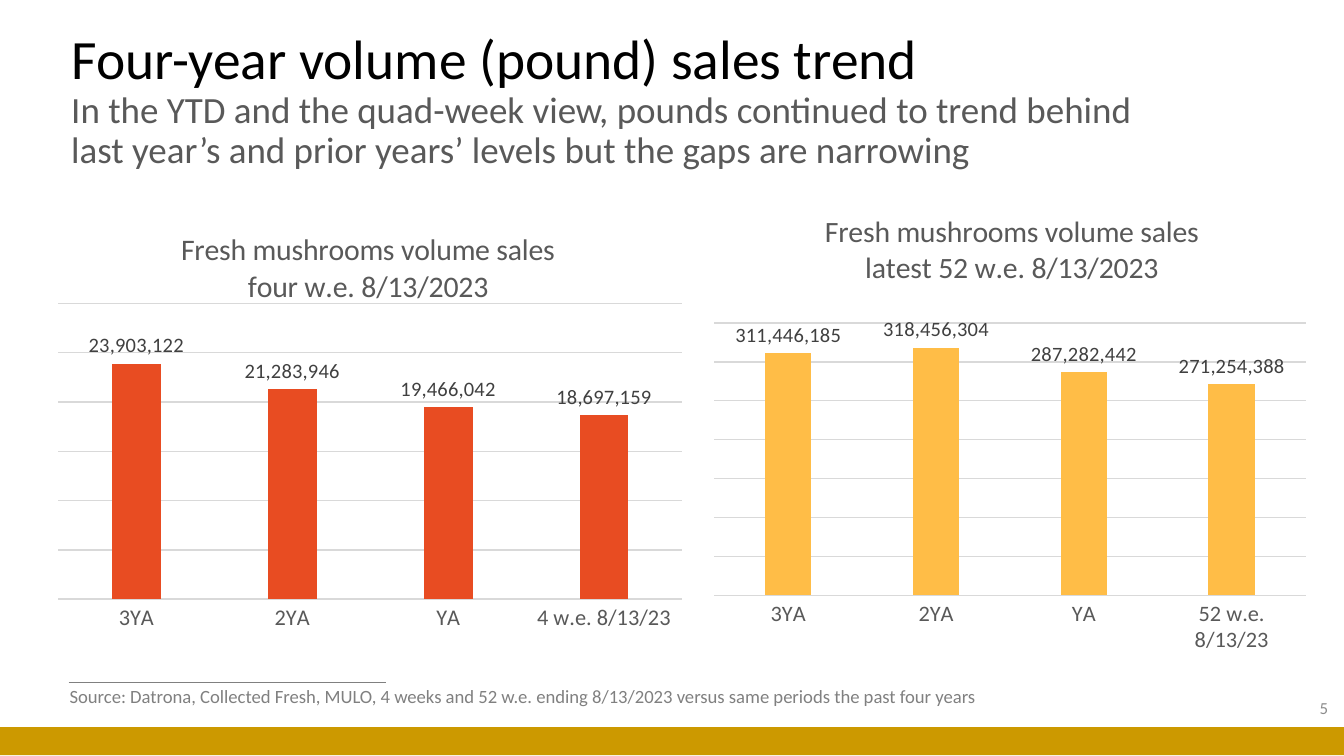
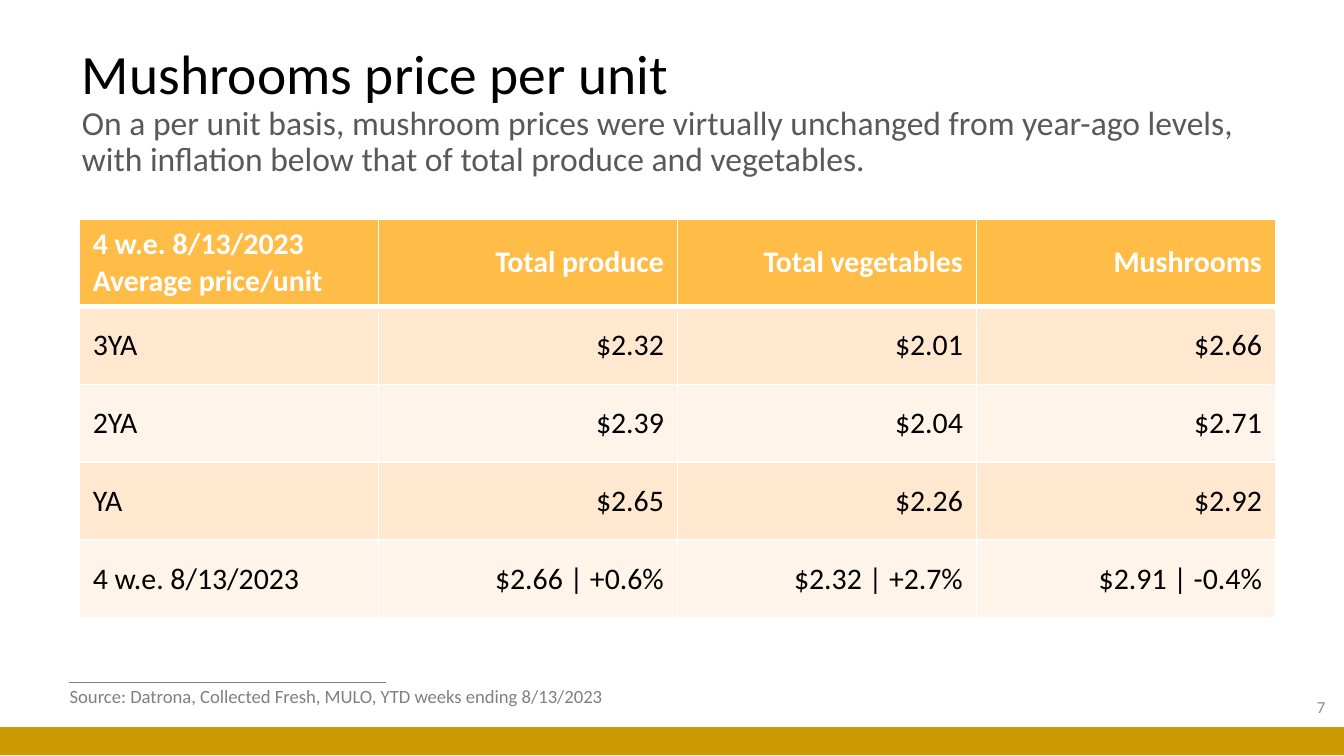
from lxml import etree
from pptx import Presentation
from pptx.chart.data import CategoryChartData
from pptx.dml.color import RGBColor
from pptx.enum.chart import XL_CHART_TYPE as ChartType
from pptx.enum.chart import XL_LABEL_POSITION as LabelPosition
from pptx.enum.chart import XL_TICK_MARK as TickMark
from pptx.enum.shapes import MSO_CONNECTOR as Connector
from pptx.enum.shapes import MSO_SHAPE as Shape
from pptx.enum.text import MSO_ANCHOR as Anchor
from pptx.enum.text import MSO_AUTO_SIZE as AutoSize
from pptx.enum.text import PP_ALIGN as Align
from pptx.oxml.ns import qn
from pptx.util import Inches, Pt

FONT = "Calibri"
COLORS = {
    "black": "000000",
    "white": "FFFFFF",
    "band": "CC9900",
    "source": "808080",
    "number": "8C8C8C",
    "subtitle": "595959",
    "label": "404040",
    "grid": "D9D9D9",
    "red": "E84C22",
    "amber": "FFBD47",
    "row_dark": "FFE8CF",
    "row_light": "FFF4E9",
}


def rgb(name):
    return RGBColor.from_string(COLORS[name])


def style(font, size, color, bold=None):
    font.name = FONT
    font.size = Pt(size)
    font.color.rgb = rgb(color)
    font.bold = bold


def box(left, top, width, height):
    return Inches(left), Inches(top), Inches(width), Inches(height)


def add_frame(slide):
    """Draw the bottom band and the short rule above the source."""
    rule = slide.shapes.add_connector(
        Connector.STRAIGHT, Inches(0.51), Inches(5.08), Inches(2.87), Inches(5.08))
    rule.line.color.rgb = rgb("source")
    rule.line.width = Pt(0.5)
    etree.SubElement(rule._element.spPr, qn("a:effectLst"))
    band = slide.shapes.add_shape(Shape.RECTANGLE, *box(0, 5.41, 10, 0.21))
    band.shadow.inherit = False
    band.fill.solid()
    band.fill.fore_color.rgb = rgb("band")
    band.line.fill.background()


def set_title(slide, heading, message, place, message_size):
    title = slide.shapes.title
    title.left, title.top, title.width, title.height = box(*place)
    frame = title.text_frame
    frame.text = f"{heading}\v{message}"
    frame.word_wrap = True
    frame.auto_size = AutoSize.NONE
    frame.vertical_anchor = Anchor.MIDDLE
    paragraph = frame.paragraphs[0]
    paragraph.alignment = Align.LEFT
    paragraph.line_spacing = 0.9
    heading_run, message_run = paragraph.runs
    style(heading_run.font, 29.7, "black")
    style(message_run.font, message_size, "subtitle")


def add_source(slide, text, width):
    frame = slide.shapes.add_textbox(*box(0.42, 5.05, width, 0.27)).text_frame
    frame.text = text
    frame.word_wrap = False
    frame.auto_size = AutoSize.SHAPE_TO_FIT_TEXT
    style(frame.paragraphs[0].runs[0].font, 10, "source")


def add_number(slide, number, left, top):
    frame = slide.shapes.add_textbox(*box(left, top, 2.25, 0.3)).text_frame
    frame.text = str(number)
    frame.word_wrap = True
    frame.vertical_anchor = Anchor.MIDDLE
    frame.paragraphs[0].alignment = Align.RIGHT
    style(frame.paragraphs[0].runs[0].font, 9, "number")


def set_layout(parent, index, **settings):
    """Give a chart part a manual layout, as child number index."""
    for previous in parent.findall(qn("c:layout")):
        parent.remove(previous)
    layout = etree.Element(qn("c:layout"))
    manual = etree.SubElement(layout, qn("c:manualLayout"))
    for tag, value in settings.items():
        etree.SubElement(manual, qn(f"c:{tag}")).set("val", str(value))
    parent.insert(index, layout)


def add_sales_chart(slide, place, title, title_place, sales, color,
                    axis_max, axis_step, plot_top, plot_height):
    data = CategoryChartData(number_format="#,##0")
    data.categories = list(sales)
    data.add_series("Series 1", list(sales.values()))
    chart = slide.shapes.add_chart(
        ChartType.COLUMN_CLUSTERED, *box(*place), data).chart
    style(chart.font, 10, "black")
    chart.has_legend = False

    chart.has_title = True
    title_frame = chart.chart_title.text_frame
    title_frame.text = title
    for paragraph in title_frame.paragraphs:
        style(paragraph.runs[0].font, 16, "subtitle", False)
    title_x, title_y = title_place
    set_layout(chart.chart_title._element, 1,
               xMode="edge", yMode="edge", x=title_x, y=title_y)

    plot_area = chart._chartSpace.find(qn("c:chart")).find(qn("c:plotArea"))
    set_layout(plot_area, 0, layoutTarget="inner", xMode="edge", yMode="edge",
               x=0, y=plot_top, w=1, h=plot_height)

    periods = chart.category_axis
    periods.major_tick_mark = periods.minor_tick_mark = TickMark.NONE
    periods.format.line.color.rgb = rgb("grid")
    periods.format.line.width = Pt(0.75)
    style(periods.tick_labels.font, 12, "subtitle")

    pounds = chart.value_axis
    pounds.visible = False
    pounds.minimum_scale = 0
    pounds.maximum_scale = axis_max
    pounds.major_unit = axis_step
    pounds.has_major_gridlines = True
    pounds.major_gridlines.format.line.color.rgb = rgb("grid")
    pounds.major_gridlines.format.line.width = Pt(0.75)
    pounds.tick_labels.number_format = "#,##0"
    pounds.tick_labels.number_format_is_linked = False

    plot = chart.plots[0]
    plot.gap_width = 219
    plot.overlap = -27
    plot.vary_by_categories = False
    bars = plot.series[0]
    bars.format.fill.solid()
    bars.format.fill.fore_color.rgb = rgb(color)
    labels = bars.data_labels
    labels.show_value = True
    labels.position = LabelPosition.OUTSIDE_END
    labels.number_format = "#,##0"
    labels.number_format_is_linked = False
    style(labels.font, 11, "label")


def set_borders(cell, bottom_width):
    widths = {"lnL": 1, "lnR": 1, "lnT": 1, "lnB": bottom_width}
    properties = cell._tc.get_or_add_tcPr()
    for index, (side, width) in enumerate(widths.items()):
        line = etree.Element(qn(f"a:{side}"), w=str(Pt(width)))
        fill = etree.SubElement(line, qn("a:solidFill"))
        etree.SubElement(fill, qn("a:srgbClr"), val=COLORS["white"])
        properties.insert(index, line)


def add_price_table(slide, rows):
    table = slide.shapes.add_table(
        len(rows), len(rows[0]), *box(0.59, 1.63, 8.9, 2.96)).table
    for column in table.columns:
        column.width = Inches(8.9 / len(rows[0]))
    for row_index, prices in enumerate(rows):
        header = row_index == 0
        table.rows[row_index].height = Inches(0.65 if header else 0.58)
        fill = "amber" if header else "row_dark" if row_index % 2 else "row_light"
        for column_index, text in enumerate(prices):
            cell = table.cell(row_index, column_index)
            cell.text_frame.text = text
            cell.vertical_anchor = Anchor.MIDDLE
            cell.fill.solid()
            cell.fill.fore_color.rgb = rgb(fill)
            set_borders(cell, 3 if header else 1)
            for paragraph in cell.text_frame.paragraphs:
                paragraph.alignment = Align.RIGHT if column_index else Align.LEFT
                style(paragraph.runs[0].font, 16,
                      "white" if header else "black", header)


def build_volume_slide(slide):
    add_frame(slide)
    set_title(
        slide, "Four-year volume (pound) sales trend",
        "In the YTD and the quad-week view, pounds continued to trend behind "
        "last year’s and prior years’ levels but the gaps are narrowing",
        (0.43, 0.36, 8.35, 0.79), 19.8)
    add_number(slide, 5, 7.73, 5.12)
    add_source(
        slide, "Source: Datrona, Collected Fresh, MULO, 4 weeks and 52 w.e. ending "
        "8/13/2023 versus same periods the past four years", 7.1)
    add_sales_chart(
        slide, (0.43, 1.55, 4.65, 3.31),
        "Fresh mushrooms volume sales\nfour w.e. 8/13/2023", (0.19, 0.04),
        {"3YA": 23903122, "2YA": 21283946, "YA": 19466042,
         "4 w.e. 8/13/23": 18697159},
        "red", 30_000_000, 5_000_000, 0.214, 0.665)
    add_sales_chart(
        slide, (5.31, 1.55, 4.41, 3.31),
        "Fresh mushrooms volume sales\nlatest 52 w.e. 8/13/2023", (0.18, 0),
        {"3YA": 311446185, "2YA": 318456304, "YA": 287282442,
         "52 w.e. 8/13/23": 271254388},
        "amber", 350_000_000, 50_000_000, 0.261, 0.619)


def build_price_slide(slide):
    add_frame(slide)
    set_title(
        slide, "Mushrooms price per unit",
        "On a per unit basis, mushroom prices were virtually unchanged from "
        "year-ago levels, with inflation below that of total produce and vegetables.",
        (0.51, 0.57, 9.06, 0.54), 18)
    add_number(slide, 7, 7.71, 5.11)
    add_source(slide, "Source: Datrona, Collected Fresh, MULO, YTD weeks ending "
               "8/13/2023", 4.31)
    add_price_table(slide, [
        ("4 w.e. 8/13/2023\nAverage price/unit", "Total produce",
         "Total vegetables", "Mushrooms"),
        ("3YA", "$2.32", "$2.01", "$2.66"),
        ("2YA", "$2.39", "$2.04", "$2.71"),
        ("YA", "$2.65", "$2.26", "$2.92"),
        ("4 w.e. 8/13/2023", "$2.66 | +0.6%", "$2.32 | +2.7%", "$2.91 | -0.4%"),
    ])


def main():
    deck = Presentation()
    deck.slide_width = Inches(10)
    deck.slide_height = deck.slide_width * 9 // 16
    title_only = deck.slide_layouts[5]
    for build in (build_volume_slide, build_price_slide):
        build(deck.slides.add_slide(title_only))
    deck.save("out.pptx")


if __name__ == "__main__":
    main()
